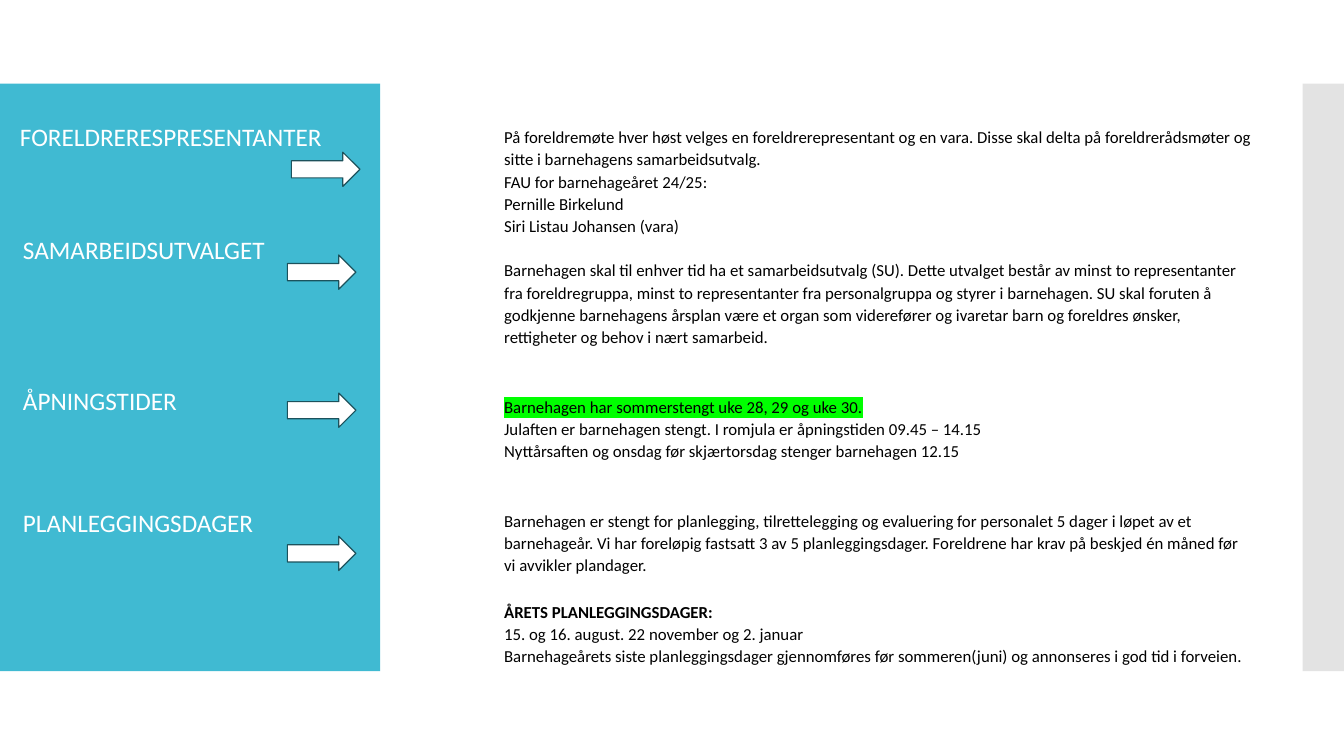
from lxml import etree
from pptx import Presentation
from pptx.dml.color import RGBColor
from pptx.enum.shapes import MSO_SHAPE
from pptx.enum.text import MSO_ANCHOR, MSO_AUTO_SIZE
from pptx.oxml.ns import qn
from pptx.util import Inches, Pt

COLORS = {"panel": "40BAD2", "strip": "C8C8C8", "white": "FFFFFF",
          "outline": "1C525C", "text": "000000", "mark": "00FF00"}
FONT = "Calibri"

# label, label box (left, top, width), arrow (left, top)
TOPICS = [
    ("FORELDRERESPRESENTANTER", (0.1, 1.15, 5.86), (2.89, 1.51)),
    ("SAMARBEIDSUTVALGET", (0.13, 2.28, 6.67), (2.85, 2.53)),
    ("ÅPNINGSTIDER", (0.13, 3.77, 6.67), (2.85, 3.9)),
    ("PLANLEGGINGSDAGER", (0.13, 4.98, 6.67), (2.85, 5.32)),
]

# space before the section in points, style of its first line, lines
SECTIONS = [
    (0, None, [
        "På foreldremøte hver høst velges en foreldrerepresentant og en vara. "
        "Disse skal delta på foreldrerådsmøter og sitte i barnehagens samarbeidsutvalg.",
        "FAU for barnehageåret 24/25:",
        "Pernille Birkelund",
        "Siri Listau Johansen (vara)"]),
    (16, None, [
        "Barnehagen skal til enhver tid ha et samarbeidsutvalg (SU). Dette utvalget "
        "består av minst to representanter fra foreldregruppa, minst to representanter "
        "fra personalgruppa og styrer i barnehagen. SU skal foruten å godkjenne "
        "barnehagens årsplan være et organ som viderefører og ivaretar barn og "
        "foreldres ønsker, rettigheter og behov i nært samarbeid."]),
    (34, "mark", [
        "Barnehagen har sommerstengt uke 28, 29 og uke 30.",
        "Julaften er barnehagen stengt. I romjula er åpningstiden 09.45 – 14.15",
        "Nyttårsaften og onsdag før skjærtorsdag stenger barnehagen 12.15"]),
    (34, None, [
        "Barnehagen er stengt for planlegging, tilrettelegging og evaluering for "
        "personalet 5 dager i løpet av et barnehageår. Vi har foreløpig fastsatt 3 av 5 "
        "planleggingsdager. Foreldrene har krav på beskjed én måned før vi avvikler "
        "plandager."]),
    (18, "bold", [
        "ÅRETS PLANLEGGINGSDAGER:",
        "15. og 16. august. 22 november og 2. januar",
        "Barnehageårets siste planleggingsdager gjennomføres før sommeren(juni) og "
        "annonseres i god tid i forveien."]),
]


def rgb(name):
    return RGBColor.from_string(COLORS[name])


def format_run(r, size, color):
    r.font.name, r.font.size = FONT, Pt(size)
    r.font.color.rgb = rgb(color)


def highlight(r):
    fill = r.font._element.find(qn("a:solidFill"))
    mark = etree.Element(qn("a:highlight"))
    etree.SubElement(mark, qn("a:srgbClr"), val=COLORS["mark"])
    fill.addnext(mark)


def add_block(slide, kind, box, fill, line=None):
    sp = slide.shapes.add_shape(kind, *map(Inches, box))
    sp.shadow.inherit = False
    sp.fill.solid()
    sp.fill.fore_color.rgb = rgb(fill)
    if line:
        sp.line.color.rgb, sp.line.width = rgb(line), Pt(0.85)
    else:
        sp.line.fill.background()
    return sp


def add_side_panels(slide, top, height):
    add_block(slide, MSO_SHAPE.RECTANGLE, (0, top, 3.77, height), "panel")
    strip = add_block(slide, MSO_SHAPE.RECTANGLE, (12.92, top, 0.41, height), "strip")
    color = strip.fill._xPr.find(qn("a:solidFill"))[0]
    etree.SubElement(color, qn("a:alpha"), val="50000")


def add_topic(slide, label, label_box, arrow_at):
    tf = slide.shapes.add_textbox(*map(Inches, (*label_box, 0.4))).text_frame
    tf.word_wrap = True
    tf.text = label
    format_run(tf.paragraphs[0].runs[0], 18, "white")
    add_block(slide, MSO_SHAPE.RIGHT_ARROW, (*arrow_at, 0.68, 0.34), "white", "outline")


def fill_body(body, box):
    body.left, body.top, body.width, body.height = map(Inches, box)
    tf = body.text_frame
    tf.word_wrap, tf.auto_size = True, MSO_AUTO_SIZE.NONE
    tf.vertical_anchor = MSO_ANCHOR.TOP
    tf.margin_left = tf.margin_right = tf.margin_bottom = 0
    tf.margin_top = Inches(0.84)
    lines = [(text, gap if i == 0 else 0, style if i == 0 else None)
             for gap, style, texts in SECTIONS for i, text in enumerate(texts)]
    for i, (text, gap, style) in enumerate(lines):
        p = tf.add_paragraph() if i else tf.paragraphs[0]
        p.text = text
        p.line_spacing, p.space_before, p.space_after = 1.1, Pt(gap), Pt(0)
        pPr = p._p.get_or_add_pPr()
        pPr.set("marL", "0")
        pPr.set("indent", "0")
        etree.SubElement(pPr, qn("a:buNone"))
        r = p.runs[0]
        format_run(r, 12, "text")
        if style == "bold":
            r.font.bold = True
        elif style == "mark":
            highlight(r)


def main():
    prs = Presentation()
    prs.slide_width, prs.slide_height = Inches(13.33), Inches(7.5)
    slide = prs.slides.add_slide(prs.slide_layouts[1])
    title = slide.shapes.title._element
    title.getparent().remove(title)
    add_side_panels(slide, 0.83, 5.83)
    fill_body(slide.placeholders[1], (5, 0.4, 7.42, 6.6))
    for topic in TOPICS:
        add_topic(slide, *topic)
    prs.save("out.pptx")


if __name__ == "__main__":
    main()
